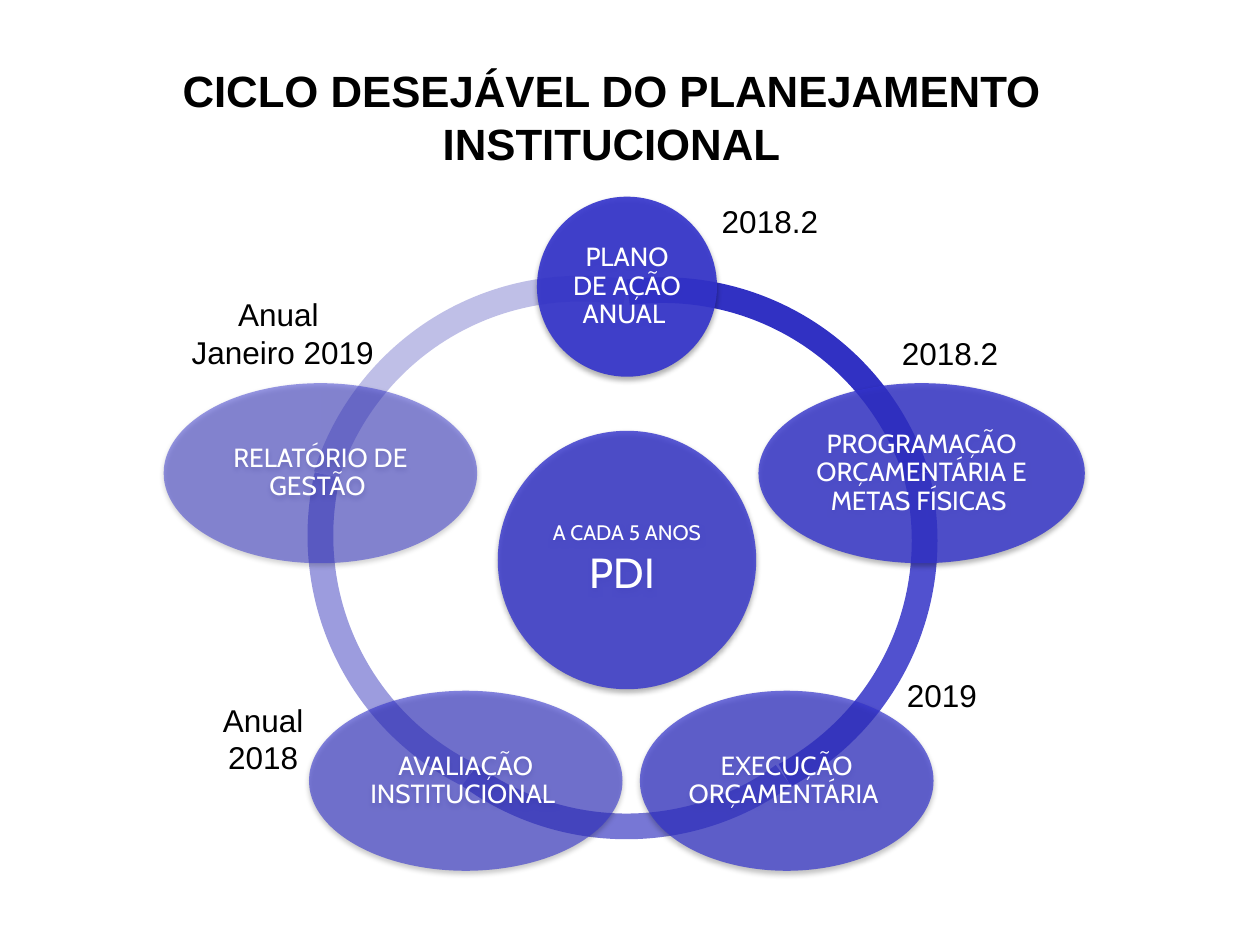
"""Build the slide on the desired cycle of institutional planning."""
from dataclasses import dataclass

from lxml.etree import SubElement
from pptx import Presentation
from pptx.dml.color import RGBColor
from pptx.enum.shapes import MSO_SHAPE
from pptx.enum.text import MSO_ANCHOR, PP_ALIGN
from pptx.oxml.ns import qn
from pptx.shapes.autoshape import Shape
from pptx.slide import Slide
from pptx.util import Cm, Pt

BLACK = RGBColor(0x00, 0x00, 0x00)
WHITE = RGBColor(0xFF, 0xFF, 0xFF)
INDIGO = RGBColor(0x33, 0x33, 0xCC)
ARC_DIAMETER = 11.28
ARC_THICKNESS = 0.046
STAGE_HEIGHT = 3.63
CORE_DIAMETER = 5.21


@dataclass(frozen=True)
class Arc:
    left: float
    top: float
    start: float
    end: float
    color: RGBColor


@dataclass(frozen=True)
class Bubble:
    lines: tuple[tuple[str, int], ...]
    center_x: float
    center_y: float
    width: float
    height: float
    opacity: int
    shadow_opacity: int = 35
    shadow_distance: float = 1.8


@dataclass(frozen=True)
class DateLabel:
    lines: tuple[str, ...]
    left: float
    top: float
    width: float = 4.8
    height: float = 1.02
    align: PP_ALIGN = PP_ALIGN.LEFT


def stage(wording: str, center_x: float, center_y: float, width: float, opacity: int) -> Bubble:
    return Bubble(((wording, 15),), center_x, center_y, width, STAGE_HEIGHT, opacity)


ARCS = (
    Arc(6.07, 5.56, 118.51, 167.78, RGBColor(0xBF, 0xBF, 0xE7)),
    Arc(6.2, 5.16, 69.69, 115.86, RGBColor(0x9C, 0x9C, 0xDE)),
    Arc(6.99, 5.64, 32.4, 75.6, RGBColor(0x77, 0x77, 0xD5)),
    Arc(7.62, 5.26, 207.5, 36.94, RGBColor(0x51, 0x51, 0xCF)),
    Arc(7.72, 5.59, 157.54, 205.28, RGBColor(0x31, 0x31, 0xC3)),
)
BUBBLES = (
    Bubble((("A CADA 5 ANOS", 12), ("PDI ", 24)), 12.64, 11.29,
           CORE_DIAMETER, CORE_DIAMETER, 80, 38, 1.6),
    stage("PLANO DE AÇÃO ANUAL ", 12.64, 5.78, STAGE_HEIGHT, 90),
    stage("PROGRAMAÇÃO ORÇAMENTÁRIA E METAS FÍSICAS ", 18.58, 9.54, 6.58, 80),
    stage("EXECUÇÃO ORÇAMENTÁRIA ", 15.86, 15.74, 5.92, 70),
    stage("AVALIAÇÃO INSTITUCIONAL ", 9.39, 15.74, 6.32, 60),
    stage("RELATÓRIO DE GESTÃO ", 6.46, 9.54, 6.32, 50),
)
DATE_LABELS = (
    DateLabel(("2018.2",), 14.3, 3.94),
    DateLabel(("2018.2",), 17.93, 6.6),
    DateLabel(("2019",), 18.03, 13.51),
    DateLabel(("Anual", "2018"), 3.91, 14, 2.79, 2.57, PP_ALIGN.CENTER),
    DateLabel(("Anual ", "Janeiro 2019"), 3.4, 5.82, 4.6, 1.8, PP_ALIGN.CENTER),
)


def paint(shape: Shape, color: RGBColor) -> None:
    shape.fill.solid()
    shape.fill.fore_color.rgb = color
    shape.line.fill.background()
    shape.shadow.inherit = False


def set_opacity(color_element, percent: int) -> None:
    SubElement(color_element, qn("a:alpha"), val=str(percent * 1000))


def cast_shadow(shape: Shape, opacity: int, distance: float) -> None:
    effects = shape._element.spPr.find(qn("a:effectLst"))
    shadow = SubElement(effects, qn("a:outerShdw"), blurRad=str(Pt(3.1)),
                        dist=str(Pt(distance)), dir="5400000", rotWithShape="0")
    set_opacity(SubElement(shadow, qn("a:srgbClr"), val=str(BLACK)), opacity)


def format_title(slide: Slide) -> None:
    title = slide.shapes.title
    title.left, title.top, title.width, title.height = Cm(1.91), Cm(0.76), Cm(20.83), Cm(3.18)
    title.text_frame.text = "CICLO DESEJÁVEL DO PLANEJAMENTO INSTITUCIONAL"
    title.text_frame.vertical_anchor = MSO_ANCHOR.MIDDLE
    heading = title.text_frame.paragraphs[0]
    heading.alignment = PP_ALIGN.CENTER
    heading.font.name = "Arial"
    heading.font.size = Pt(25)
    heading.font.bold = True
    heading.font.color.rgb = BLACK


def draw_arc(slide: Slide, arc: Arc) -> None:
    band = slide.shapes.add_shape(MSO_SHAPE.BLOCK_ARC, Cm(arc.left), Cm(arc.top),
                                  Cm(ARC_DIAMETER), Cm(ARC_DIAMETER))
    for index, value in enumerate((arc.start, arc.end, ARC_THICKNESS)):
        band.adjustments[index] = value
    paint(band, arc.color)


def draw_bubble(slide: Slide, bubble: Bubble) -> None:
    ellipse = slide.shapes.add_shape(
        MSO_SHAPE.OVAL, Cm(bubble.center_x - bubble.width / 2),
        Cm(bubble.center_y - bubble.height / 2), Cm(bubble.width), Cm(bubble.height))
    paint(ellipse, INDIGO)
    set_opacity(ellipse._element.spPr.find(qn("a:solidFill"))[0], bubble.opacity)
    cast_shadow(ellipse, bubble.shadow_opacity, bubble.shadow_distance)
    frame = ellipse.text_frame
    frame.word_wrap = True
    frame.vertical_anchor = MSO_ANCHOR.MIDDLE
    frame.margin_left = frame.margin_right = frame.margin_top = frame.margin_bottom = Cm(0.05)
    frame.text = "\n".join(wording for wording, _ in bubble.lines)
    for paragraph, (_, size) in zip(frame.paragraphs, bubble.lines):
        paragraph.alignment = PP_ALIGN.CENTER
        paragraph.line_spacing = 0.9
        paragraph.space_after = Pt(size * 0.35)
        paragraph.font.name = "Cabin"
        paragraph.font.size = Pt(size)
        paragraph.font.color.rgb = WHITE


def draw_date_label(slide: Slide, label: DateLabel) -> None:
    frame = slide.shapes.add_textbox(Cm(label.left), Cm(label.top),
                                     Cm(label.width), Cm(label.height)).text_frame
    frame.word_wrap = True
    frame.text = "\n".join(label.lines)
    for paragraph in frame.paragraphs:
        paragraph.alignment = label.align
        paragraph.font.name = "Arial"
        paragraph.font.size = Pt(18)
        paragraph.font.color.rgb = BLACK


def main() -> None:
    presentation = Presentation()
    presentation.slide_width, presentation.slide_height = Cm(25.4), Cm(19.05)
    slide = presentation.slides.add_slide(presentation.slide_layouts.get_by_name("Title Only"))
    format_title(slide)
    for arc in ARCS:
        draw_arc(slide, arc)
    for bubble in BUBBLES:
        draw_bubble(slide, bubble)
    for label in DATE_LABELS:
        draw_date_label(slide, label)
    presentation.save("out.pptx")


if __name__ == "__main__":
    main()
